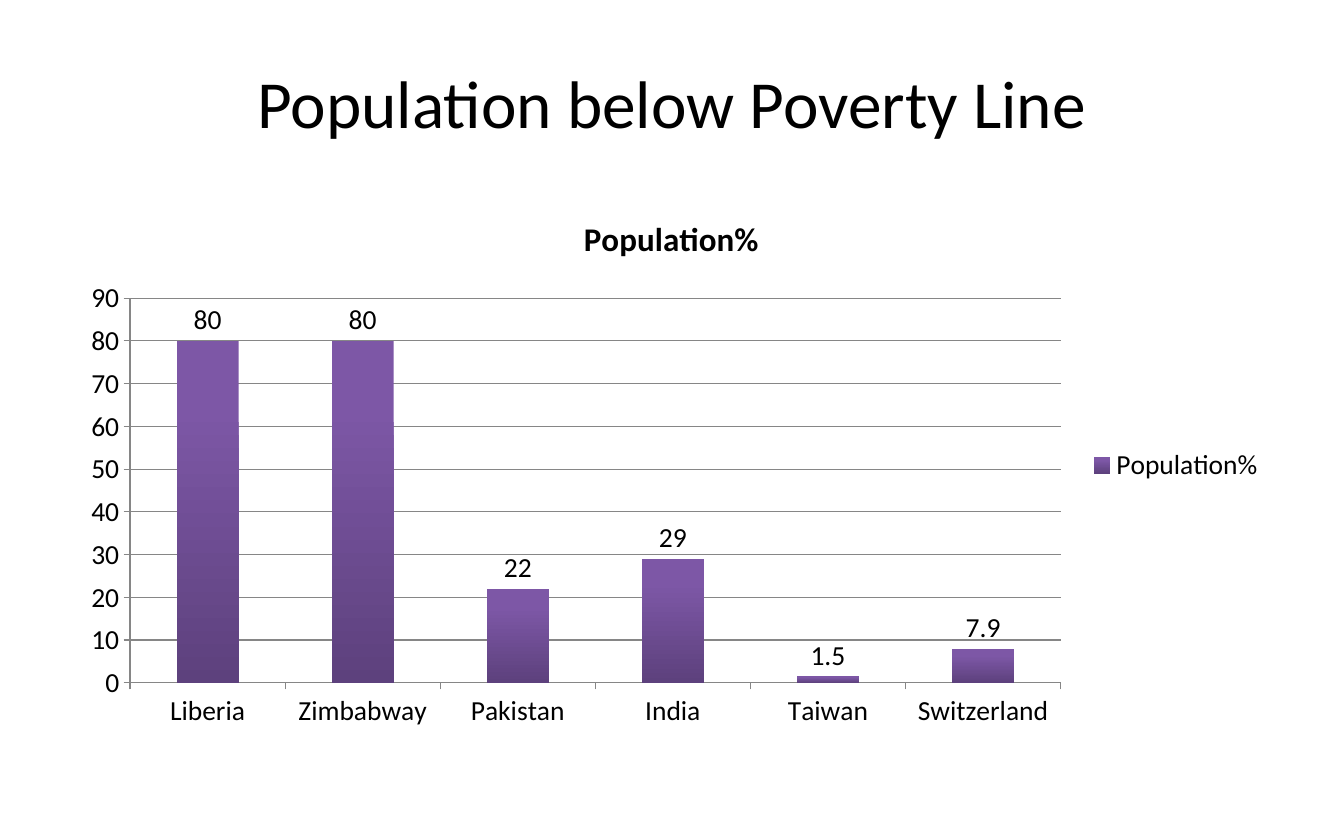
from pptx import Presentation
from pptx.chart.data import CategoryChartData
from pptx.dml.color import RGBColor
from pptx.enum.chart import XL_CHART_TYPE, XL_LABEL_POSITION, XL_LEGEND_POSITION, XL_TICK_MARK
from pptx.enum.text import MSO_ANCHOR, PP_ALIGN
from pptx.util import Inches, Pt

COLUMNS = XL_CHART_TYPE.COLUMN_CLUSTERED
ABOVE_BAR = XL_LABEL_POSITION.OUTSIDE_END
LEGEND_RIGHT = XL_LEGEND_POSITION.RIGHT
TICK_OUT = XL_TICK_MARK.OUTSIDE
MIDDLE = MSO_ANCHOR.MIDDLE
CENTER = PP_ALIGN.CENTER

POVERTY_RATES = {
    "Liberia": 80, "Zimbabway": 80, "Pakistan": 22,
    "India": 29, "Taiwan": 1.5, "Switzerland": 7.9,
}


def color(code):
    return RGBColor.from_string(code)


class SlideBuilder:
    font_name = "Calibri"
    ink = "000000"
    line_color = "868686"
    bar_stops = [(0.2, "7D57A6"), (1, "5D417D")]

    def __init__(self, page):
        self.page = page

    def style(self, font, size, bold=False):
        formats = {"name": self.font_name, "size": Pt(size), "bold": bold}
        for name, value in formats.items():
            setattr(font, name, value)
        font.color.rgb = color(self.ink)

    def outline(self, line):
        line.color.rgb = color(self.line_color)
        line.width = Pt(0.75)

    def heading(self, text, left, top, width, height, size):
        box = self.page.shapes.add_textbox(
            Inches(left), Inches(top), Inches(width), Inches(height))
        frame = box.text_frame
        for name, value in {"word_wrap": True, "vertical_anchor": MIDDLE}.items():
            setattr(frame, name, value)
        para = frame.paragraphs[0]
        para.alignment = CENTER
        span = para.add_run()
        span.text = text
        self.style(span.font, size)

    def column_chart(self, name, values, left, top, width, height, top_value, step):
        data = CategoryChartData()
        data.categories = list(values)
        data.add_series(name, list(values.values()))
        chart = self.page.shapes.add_chart(
            COLUMNS, Inches(left), Inches(top), Inches(width), Inches(height), data).chart
        self.style(chart.font, 18)

        # Title and legend
        chart.has_title = True
        title = chart.chart_title
        title.include_in_layout = False
        span = title.text_frame.paragraphs[0].add_run()
        span.text = name
        self.style(span.font, 21.6, bold=True)
        chart.has_legend = True
        chart.legend.position = LEGEND_RIGHT
        chart.legend.include_in_layout = False

        # Axes
        for axis in (chart.category_axis, chart.value_axis):
            axis.major_tick_mark = TICK_OUT
            self.outline(axis.format.line)
        scale = {"minimum_scale": 0, "maximum_scale": top_value,
                 "major_unit": step, "has_major_gridlines": True}
        for key, value in scale.items():
            setattr(chart.value_axis, key, value)
        self.outline(chart.value_axis.major_gridlines.format.line)

        # Bars and their values
        plot = chart.plots[0]
        plot.vary_by_categories = False
        plot.gap_width = 150
        plot.has_data_labels = True
        plot.data_labels.show_value = True
        plot.data_labels.position = ABOVE_BAR
        self.style(plot.data_labels.font, 18)
        fill = plot.series[0].format.fill
        fill.gradient()
        fill.gradient_angle = 270
        for stop, (position, code) in zip(fill.gradient_stops, self.bar_stops):
            stop.position = position
            stop.color.rgb = color(code)


def main():
    deck = Presentation()
    deck.slide_width = Inches(12.21)
    deck.slide_height = Inches(7.5)
    builder = SlideBuilder(deck.slides.add_slide(deck.slide_layouts[6]))
    builder.heading("Population below Poverty Line", 0.61, 0.3, 10.99, 1.25, 44)
    builder.column_chart("Population%", POVERTY_RATES, 0.61, 1.75, 10.98, 4.95, 90, 10)
    deck.save("out.pptx")


if __name__ == "__main__":
    main()
